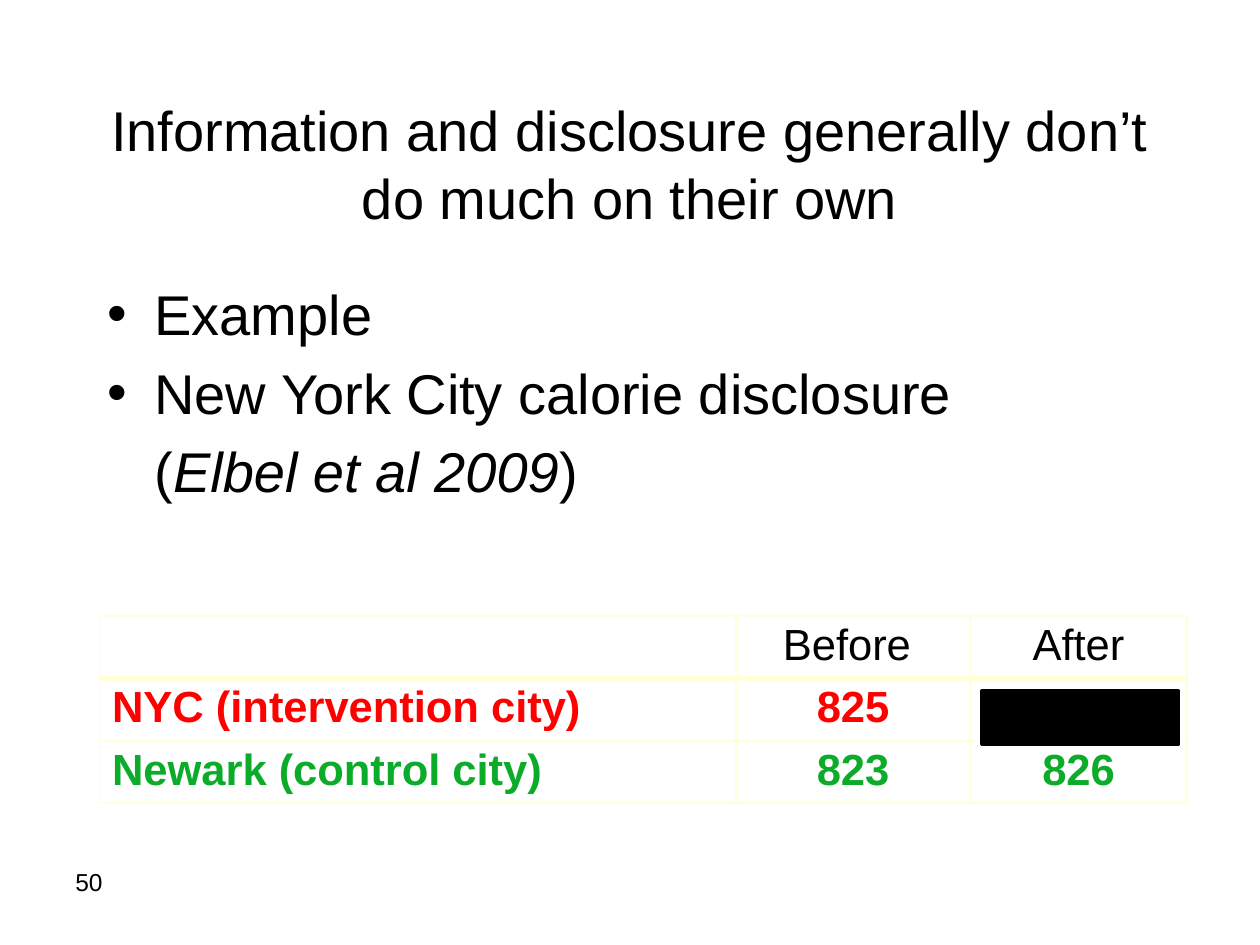
from dataclasses import dataclass

from lxml import etree
from pptx import Presentation
from pptx.dml.color import RGBColor
from pptx.enum.shapes import MSO_SHAPE
from pptx.enum.text import MSO_ANCHOR, PP_ALIGN
from pptx.oxml.ns import qn
from pptx.util import Inches, Pt

CENTER, LEFT = PP_ALIGN.CENTER, PP_ALIGN.LEFT
MIDDLE = MSO_ANCHOR.MIDDLE
RECTANGLE = MSO_SHAPE.RECTANGLE
BLACK, RED, GREEN, CREAM = "000000", "FF0000", "0CAC2A", "FFFFD9"


@dataclass
class TableRow:
    values: tuple[str, ...]
    color: str = BLACK
    bold: bool = False
    rule_below: float = 1


ROWS = [
    TableRow(("", "Before ", "After"), rule_below=3),
    TableRow(("NYC (intervention city)", "825", ""), RED, True),
    TableRow(("Newark (control city)", "823", "826"), GREEN, True),
]
COLUMN_WIDTHS = (5.05, 1.86, 1.72)
ROW_HEIGHT = 0.49


def rgb(color: str) -> RGBColor:
    return RGBColor.from_string(color)


def add_text(p, text: str, size: float = 32, color: str = BLACK,
             bold: bool = False, italic: bool = False) -> None:
    r = p.add_run()
    r.text = text
    r.font.name = "Arial"
    r.font.size = Pt(size)
    r.font.bold = bold
    r.font.italic = italic
    r.font.color.rgb = rgb(color)


def place(sp, left: float, top: float, width: float, height: float) -> None:
    sp.left, sp.top = Inches(left), Inches(top)
    sp.width, sp.height = Inches(width), Inches(height)


def remove_bullet(p) -> None:
    """Drop the bullet and start the first line at the hanging indent."""
    pPr = p._p.get_or_add_pPr()
    pPr.set("indent", "0")
    etree.SubElement(pPr, qn("a:buNone"))


def add_borders(cell, bottom: float) -> None:
    tcPr = cell._tc.get_or_add_tcPr()
    for side, width in (("L", 1), ("R", 1), ("T", 1), ("B", bottom)):
        ln = etree.SubElement(tcPr, qn(f"a:ln{side}"), w=str(Pt(width)))
        fill = etree.SubElement(ln, qn("a:solidFill"))
        etree.SubElement(fill, qn("a:srgbClr"), val=CREAM)


def add_results_table(s, left: float, top: float) -> None:
    frame = s.shapes.add_table(
        len(ROWS), len(COLUMN_WIDTHS), Inches(left), Inches(top),
        Inches(sum(COLUMN_WIDTHS)), Inches(ROW_HEIGHT * len(ROWS)))
    table = frame.table
    table.first_row = table.horz_banding = False
    for column, width in zip(table.columns, COLUMN_WIDTHS):
        column.width = Inches(width)
    for i, row in enumerate(ROWS):
        table.rows[i].height = Inches(ROW_HEIGHT)
        for j, value in enumerate(row.values):
            cell = table.cell(i, j)
            cell.margin_top = cell.margin_bottom = Inches(0.04)
            add_borders(cell, row.rule_below)
            cell.fill.background()
            p = cell.text_frame.paragraphs[0]
            p.alignment = CENTER if j else LEFT
            if value:
                add_text(p, value, size=24.9, color=row.color, bold=row.bold)


def main() -> None:
    prs = Presentation()
    prs.slide_width, prs.slide_height = Inches(10), Inches(7.5)
    s = prs.slides.add_slide(prs.slide_layouts[1])

    title, body = s.shapes.title, s.placeholders[1]
    place(title, 0.75, 0.67, 8.5, 1.25)
    title.text_frame.vertical_anchor = MIDDLE
    p = title.text_frame.paragraphs[0]
    p.alignment = CENTER
    add_text(p, "Information and disclosure generally don’t do much on their own")

    place(body, 0.75, 2.17, 8.5, 4.5)
    tf = body.text_frame
    add_text(tf.paragraphs[0], "Example")
    add_text(tf.add_paragraph(), "New York City calorie disclosure")
    citation = tf.add_paragraph()
    remove_bullet(citation)
    add_text(citation, "(")
    add_text(citation, "Elbel et al 2009", italic=True)
    add_text(citation, ")")

    number = s.shapes.add_textbox(Inches(0.5), Inches(6.83), Inches(2.33), Inches(0.5))
    number.text_frame.word_wrap = True
    add_text(number.text_frame.paragraphs[0], "50", size=14)

    add_results_table(s, 0.79, 4.89)

    cover = s.shapes.add_shape(RECTANGLE, Inches(7.79), Inches(5.48), Inches(1.56), Inches(0.43))
    cover.shadow.inherit = False
    cover.fill.solid()
    cover.fill.fore_color.rgb = rgb(BLACK)
    cover.line.color.rgb = rgb(BLACK)
    cover.line.width = Pt(2)

    prs.save("out.pptx")


if __name__ == "__main__":
    main()
